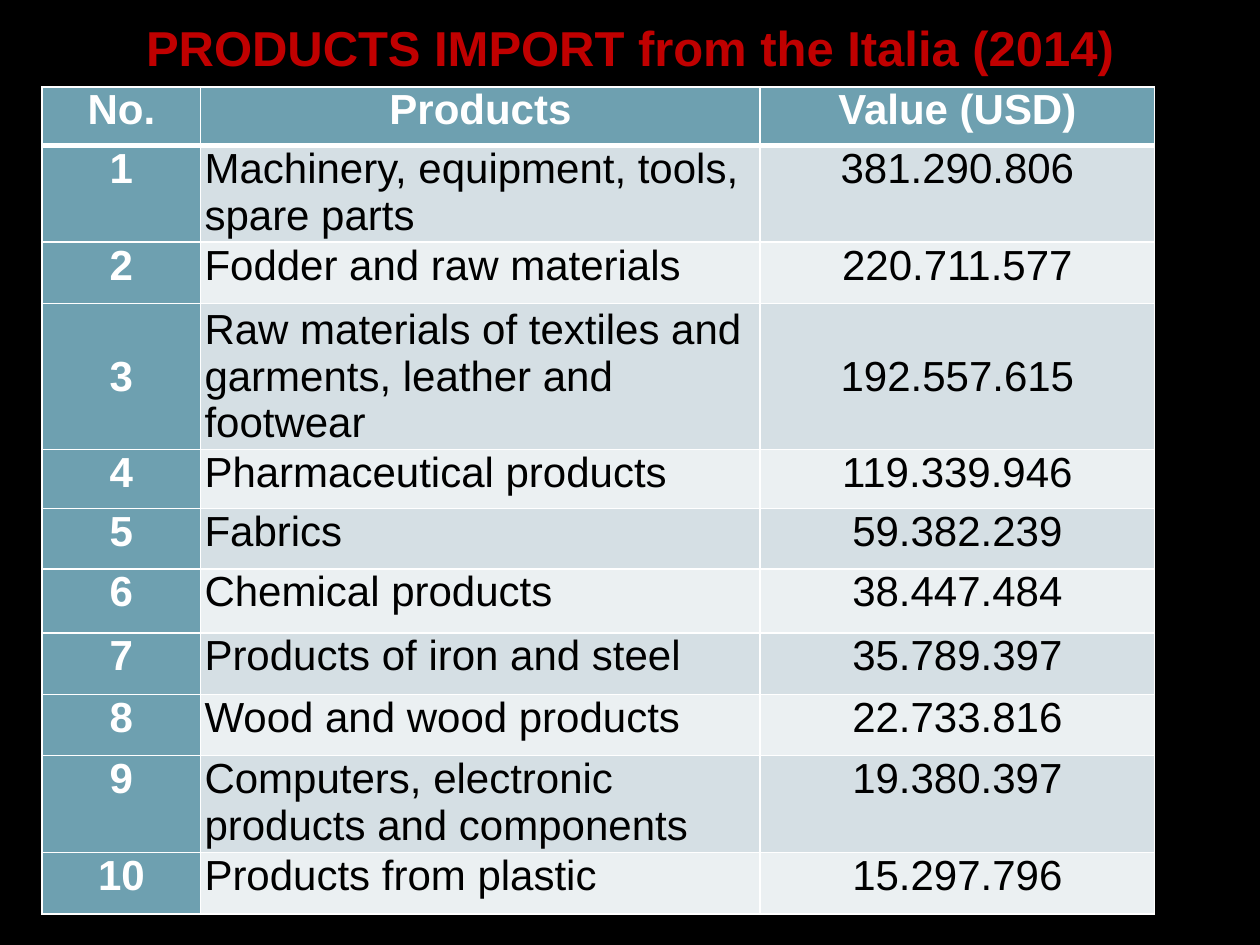
from lxml.etree import SubElement
from pptx import Presentation
from pptx.dml.color import RGBColor
from pptx.enum.text import MSO_ANCHOR, PP_ALIGN
from pptx.oxml.ns import qn
from pptx.util import Pt


def write_text(frame, text, size=24, color="000000", bold=False, align=PP_ALIGN.CENTER):
    frame.word_wrap = True
    paragraph = frame.paragraphs[0]
    paragraph.alignment = align
    run = paragraph.add_run()
    run.text = text
    run.font.name = "Arial"
    run.font.size = Pt(size)
    run.font.bold = bold
    run.font.color.rgb = RGBColor.from_string(color)


def add_border(cell, side, width, color="FFFFFF"):
    properties = cell._tc.get_or_add_tcPr()
    line = SubElement(properties, qn(f"a:ln{side}"), w=str(Pt(width)))
    SubElement(SubElement(line, qn("a:solidFill")), qn("a:srgbClr"), val=color)


presentation = Presentation()
presentation.slide_width = Pt(720)
presentation.slide_height = Pt(540)
slide = presentation.slides.add_slide(presentation.slide_layouts[5])
slide.background.fill.solid()
slide.background.fill.fore_color.rgb = RGBColor.from_string("000000")

title = slide.shapes.title
title.left, title.top, title.width, title.height = Pt(0), Pt(-12), Pt(720), Pt(78)
frame = title.text_frame
frame.margin_left = frame.margin_right = frame.margin_top = frame.margin_bottom = Pt(3.6)
frame.vertical_anchor = MSO_ANCHOR.MIDDLE
write_text(frame, "PRODUCTS IMPORT from the Italia (2014)", size=28, color="C00000", bold=True)

imports = [
    ("Machinery, equipment, tools, spare parts", "381.290.806"),
    ("Fodder and raw materials", "220.711.577"),
    ("Raw materials of textiles and garments, leather and footwear", "192.557.615"),
    ("Pharmaceutical products", "119.339.946"),
    ("Fabrics", "59.382.239"),
    ("Chemical products", "38.447.484"),
    ("Products of iron and steel", "35.789.397"),
    ("Wood and wood products", "22.733.816"),
    ("Computers, electronic products and components", "19.380.397"),
    ("Products from plastic", "15.297.796"),
]
rows = [("No.", "Products", "Value (USD)")]
rows += [(str(number), *item) for number, item in enumerate(imports, 1)]
column_widths = [90.7, 319.7, 225.4]
row_heights = [33.3, 55.4, 35.1, 83.4, 33.8, 34.4, 36.6, 35.3, 34.9, 55.4, 35.1]

table = slide.shapes.add_table(
    len(rows), len(column_widths), Pt(24), Pt(49.7), Pt(sum(column_widths)), Pt(sum(row_heights))
).table
for column, width in zip(table.columns, column_widths):
    column.width = Pt(width)
for row, height in zip(table.rows, row_heights):
    row.height = Pt(height)

for row_index, values in enumerate(rows):
    for column_index, text in enumerate(values):
        cell = table.cell(row_index, column_index)
        cell.margin_left = cell.margin_right = Pt(2.2)
        cell.margin_top = cell.margin_bottom = Pt(0)
        is_heading = row_index == 0 or column_index == 0
        is_product = row_index > 0 and column_index == 1
        cell.vertical_anchor = MSO_ANCHOR.MIDDLE if row_index == 3 else MSO_ANCHOR.TOP
        add_border(cell, "L", 1)
        add_border(cell, "R", 1)
        add_border(cell, "T", 3 if row_index == 1 else 1)
        add_border(cell, "B", 3 if row_index == 0 else 1)
        band = "D5DFE4" if row_index % 2 else "EBF0F2"
        cell.fill.solid()
        cell.fill.fore_color.rgb = RGBColor.from_string("6EA0B0" if is_heading else band)
        write_text(
            cell.text_frame,
            text,
            color="FFFFFF" if is_heading else "000000",
            bold=is_heading,
            align=PP_ALIGN.LEFT if is_product else PP_ALIGN.CENTER,
        )

presentation.save("out.pptx")
